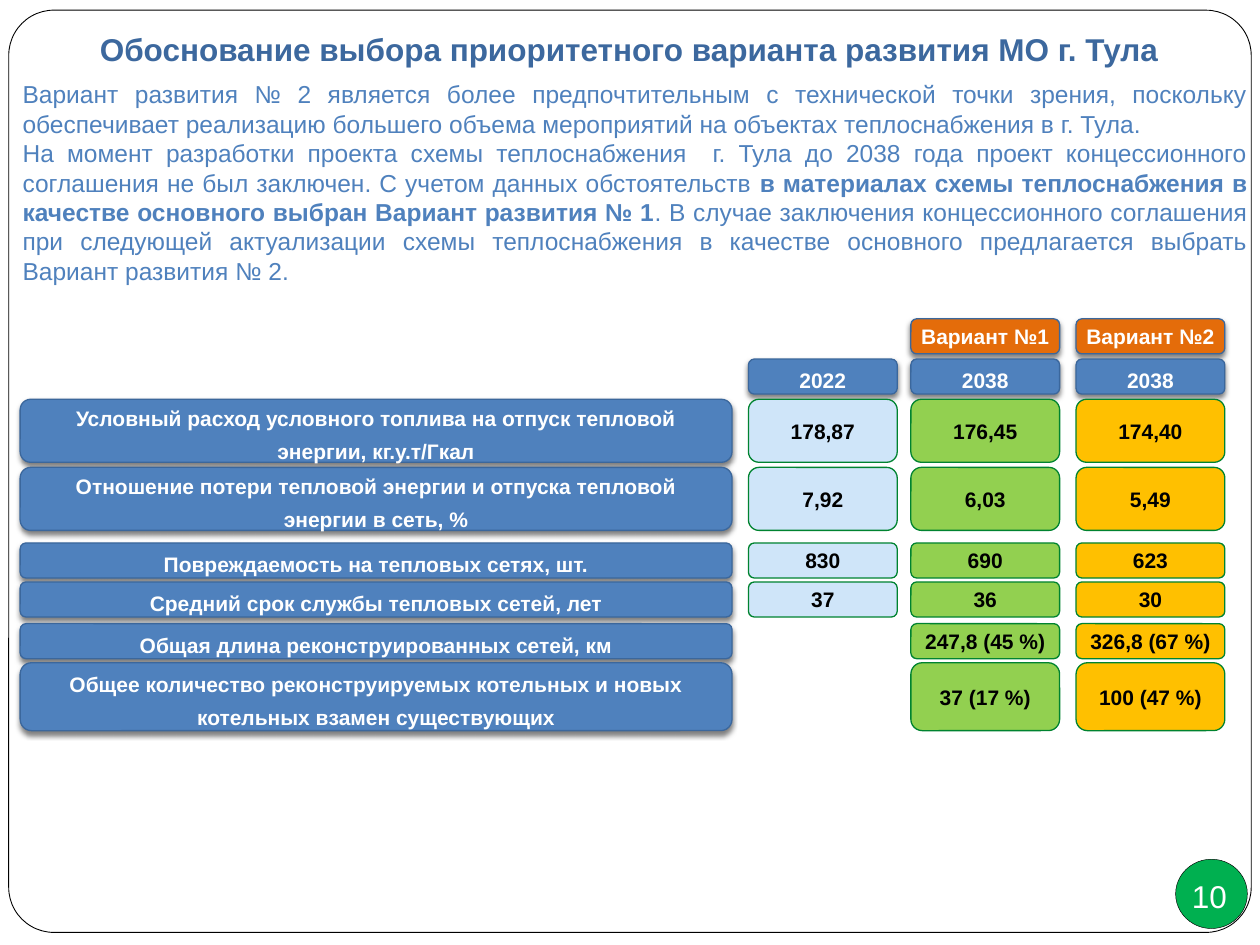
import pptx
import pptx.util
import pptx.dml.color
import pptx.enum.shapes
import pptx.enum.text
import pptx.oxml

Pt = pptx.util.Pt
Shape = pptx.enum.shapes.MSO_SHAPE
Align = pptx.enum.text.PP_ALIGN
Anchor = pptx.enum.text.MSO_ANCHOR
Fit = pptx.enum.text.MSO_AUTO_SIZE

BLUE, NAVY, ORANGE = "4F81BD", "3B679C", "E46C0A"
GREEN, WHITE, BLACK = "008330", "FFFFFF", "000000"
SHADOW = (
    '<a:effectLst xmlns:a="http://schemas.openxmlformats.org/drawingml/2006/main">'
    '<a:outerShdw blurRad="38100" dist="25400" dir="5400000" rotWithShape="0">'
    '<a:srgbClr val="000000"><a:alpha val="50000"/></a:srgbClr>'
    '</a:outerShdw></a:effectLst>'
)

TITLE = "Обоснование выбора приоритетного варианта развития МО г. Тула"
BODY = [
    [("Вариант развития № 2 является более предпочтительным с технической точки "
      "зрения, поскольку обеспечивает реализацию большего объема мероприятий на "
      "объектах теплоснабжения в г. Тула.", False)],
    [("На момент разработки проекта схемы теплоснабжения  г. Тула до 2038 года "
      "проект концессионного соглашения не был заключен. С учетом данных "
      "обстоятельств ", False),
     ("в материалах схемы теплоснабжения в качестве основного выбран "
      "Вариант развития № 1", True),
     (". В случае заключения концессионного соглашения при следующей актуализации "
      "схемы теплоснабжения в качестве основного предлагается выбрать "
      "Вариант развития № 2.", False)],
]

# left offset, fill, year, variant
COLS = [
    (416.2, "CFE5F9", "2022", None),
    (509, "92D050", "2038", "Вариант №1"),
    (603.4, "FFC000", "2038", "Вариант №2"),
]
# top offset, height, label, values by column
ROWS = [
    (46, 36, "Условный расход условного топлива на отпуск тепловой энергии, кг.у.т/Гкал",
     ("178,87", "176,45", "174,40")),
    (84.9, 36, "Отношение потери тепловой энергии и отпуска тепловой энергии в сеть, %",
     ("7,92", "6,03", "5,49")),
    (128.1, 20, "Повреждаемость на тепловых сетях, шт.", ("830", "690", "623")),
    (150.4, 20, "Средний срок службы тепловых сетей, лет", ("37", "36", "30")),
    (174.2, 20, "Общая длина реконструированных сетей, км",
     (None, "247,8 (45 %)", "326,8 (67 %)")),
    (196.5, 38.8, "Общее количество реконструируемых котельных и новых котельных "
     "взамен существующих", (None, "37 (17 %)", "100 (47 %)")),
]
LABEL_W, CELL_W, HEAD_H, YEAR_Y = 406.8, 85, 20, 23


def rgb(code):
    return pptx.dml.color.RGBColor.from_string(code)


def write(para, text, size, color, bold=False):
    run = para.add_run()
    run.text = text
    font = run.font
    font.name, font.size, font.bold = "Arial", Pt(size), bold
    font.color.rgb = rgb(color)


def draw(slide, kind, box, fill, line, width):
    shape = slide.shapes.add_shape(kind, *map(Pt, box))
    shape.shadow.inherit = False
    shape.fill.solid()
    shape.fill.fore_color.rgb = rgb(fill)
    shape.line.color.rgb = rgb(line)
    shape.line.width = Pt(width)
    return shape


def tile(slide, box, text, fill, line, color, pads, space=None):
    shape = draw(slide, Shape.ROUNDED_RECTANGLE, box, fill, line, 0.75)
    frame = shape.text_frame
    frame.word_wrap = True
    frame.vertical_anchor = Anchor.MIDDLE
    frame.margin_left = frame.margin_right = Pt(pads[0])
    frame.margin_top = frame.margin_bottom = Pt(pads[1])
    para = frame.paragraphs[0]
    para.alignment = Align.CENTER
    para.line_spacing = space
    write(para, text, 12, color, True)
    return shape


def header(slide, box, text, fill=BLUE, pads=(7.2, 3.6), space=1.3):
    """Raised tile with white text, for row labels and column heads."""
    shape = tile(slide, box, text, fill, NAVY, WHITE, pads, space)
    old = shape.element.spPr.find(pptx.oxml.ns.qn("a:effectLst"))
    old.getparent().replace(old, pptx.oxml.parse_xml(SHADOW))


def table(slide, left, top):
    """Comparison grid of indicators by variant."""
    for x, fill, year, name in COLS:
        if name:
            header(slide, (left + x, top, CELL_W, HEAD_H), name, ORANGE, (3, 3.6), None)
        header(slide, (left + x, top + YEAR_Y, CELL_W, HEAD_H), year)
    for y, high, label, values in ROWS:
        header(slide, (left, top + y, LABEL_W, high), label)
        for (x, fill, year, name), value in zip(COLS, values):
            if value:
                tile(slide, (left + x, top + y, CELL_W, high), value,
                     fill, GREEN, BLACK, (3, 3))


def textbox(slide, box):
    shape = slide.shapes.add_textbox(*map(Pt, box))
    frame = shape.text_frame
    frame.word_wrap = True
    frame.auto_size = Fit.SHAPE_TO_FIT_TEXT
    return frame


def heading(slide, box):
    title = slide.shapes.title
    title.left, title.top, title.width, title.height = map(Pt, box)
    frame = title.text_frame
    frame.word_wrap = True
    frame.auto_size = Fit.SHAPE_TO_FIT_TEXT
    frame.vertical_anchor = Anchor.TOP
    para = frame.paragraphs[0]
    para.alignment = Align.CENTER
    para.line_spacing = 1.2
    para.space_before = Pt(0)
    write(para, TITLE, 18, "3C689E", True)


def border(slide, box):
    shape = draw(slide, Shape.ROUNDED_RECTANGLE, box, WHITE, BLACK, 0.5)
    shape.adjustments[0] = 0.049
    slide.shapes.title.element.addprevious(shape.element)


def body(slide, box):
    frame = textbox(slide, box)
    for i, runs in enumerate(BODY):
        para = frame.add_paragraph() if i else frame.paragraphs[0]
        para.alignment = Align.JUSTIFY
        for text, bold in runs:
            write(para, text, 14, BLUE, bold)


def badge(slide, left, top):
    """Page number in a green circle."""
    draw(slide, Shape.OVAL, (left, top, 41, 39.6), "00B050", BLACK, 0.25)
    frame = textbox(slide, (left + 2.2, top + 6.5, 39.6, 28.8))
    write(frame.paragraphs[0], "10", 18, WHITE)


def main():
    deck = pptx.Presentation()
    deck.slide_width, deck.slide_height = Pt(720), Pt(540)
    slide = deck.slides.add_slide(deck.slide_layouts[5])
    border(slide, (5, 5.8, 710, 527))
    heading(slide, (22.3, 9.4, 674.6, 31))
    body(slide, (5.8, 41.8, 714.2, 126))
    table(slide, 11.5, 182.2)
    badge(slide, 671.8, 491)
    deck.save("out.pptx")


if __name__ == "__main__":
    main()
